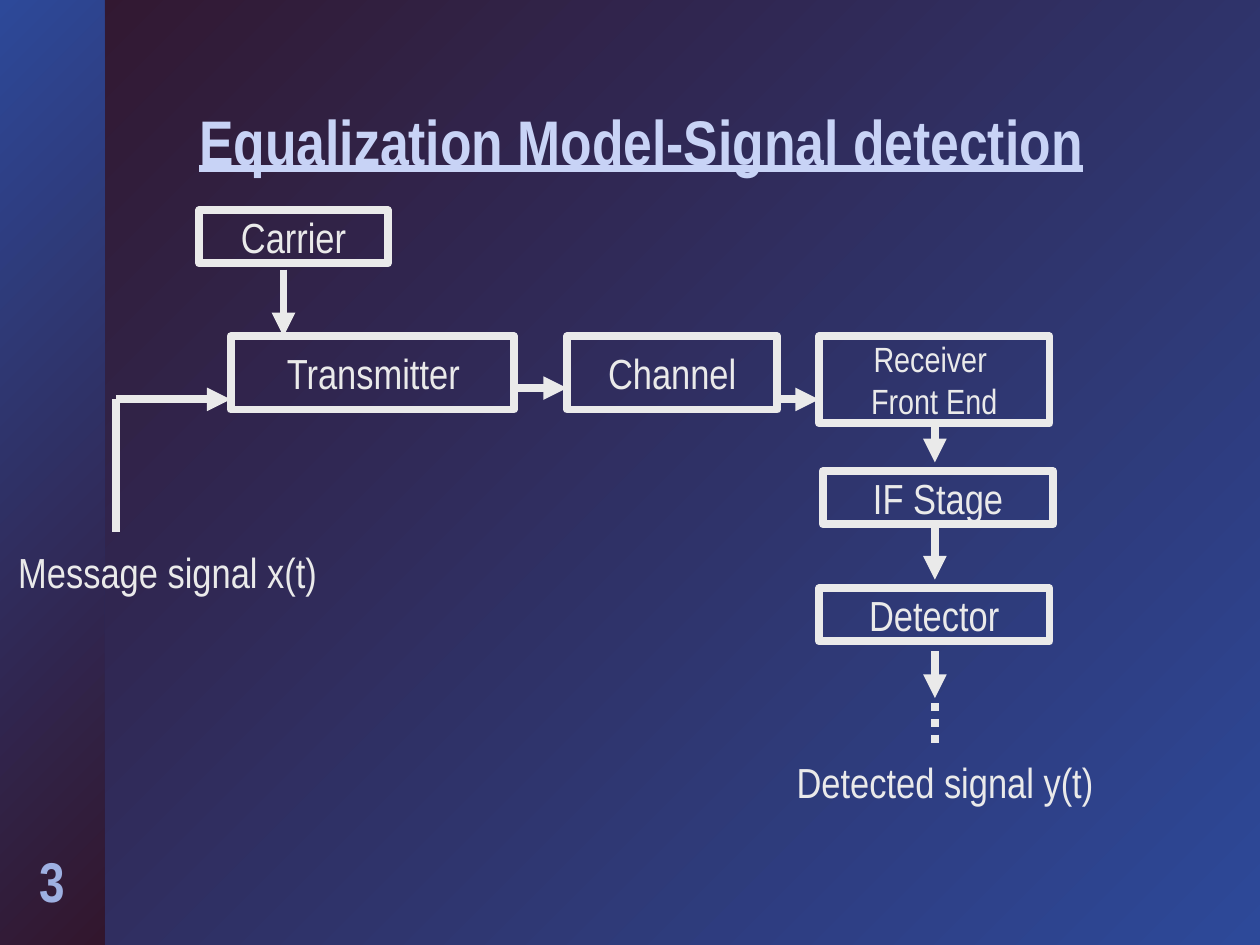
from lxml import etree
from pptx import Presentation
from pptx.dml.color import RGBColor
from pptx.enum import dml, shapes, text
from pptx.oxml.ns import qn
from pptx.util import Inches, Pt

FONT = "Arial Narrow"
INK, DARK, BLUE = "EAEAEA", "32162D", "2D4999"
TITLE = "Equalization Model-Signal detection"

# Blocks: text, left, top, width, height, size
BLOCKS = [
    ("Carrier", 1.58, 1.67, 1.5, 0.42, 24),
    (" Transmitter\t", 1.83, 2.67, 2.25, 0.58, 24),
    ("Channel", 4.5, 2.67, 1.67, 0.58, 24),
    ("Receiver \nFront End", 6.5, 2.67, 1.83, 0.69, 20),
    ("IF Stage", 6.53, 3.74, 1.83, 0.42, 24),
    ("Detector", 6.5, 4.67, 1.83, 0.42, 24),
]
# Signals: text, left, top
SIGNALS = [("Message signal x(t)", 0.58, 4.33),
           ("Detected signal y(t)", 6.75, 5.99)]
# Links: x1, y1, x2, y2
ARROWS = [
    (2.25, 2.14, 2.25, 2.67),
    (0.92, 3.17, 1.83, 3.17),
    (4.08, 3.08, 4.5, 3.08),
    (6.17, 3.17, 6.5, 3.17),
    (7.42, 3.35, 7.42, 3.67),
    (7.42, 4.17, 7.42, 4.6),
    (7.42, 5.17, 7.42, 5.54),
]
FEED = (0.92, 3.17, 0.92, 4.22)
DOTS = (7.42, 5.58, 7.42, 5.9)


def color(code):
    return RGBColor.from_string(code)


def blend(fill, first, last):
    fill.gradient()
    fill.gradient_angle = 315
    for stop, code in zip(fill.gradient_stops, (first, last)):
        stop.color.rgb = color(code)


def write(shape, words, size, code=INK, bold=False, wrap=False):
    frame = shape.text_frame
    frame.text = words
    frame.word_wrap = wrap
    frame.auto_size = text.MSO_AUTO_SIZE.NONE
    frame.vertical_anchor = text.MSO_ANCHOR.MIDDLE
    for para in frame.paragraphs:
        para.alignment = text.PP_ALIGN.CENTER
        for run in para.runs:
            font = run.font
            font.name, font.size, font.bold = FONT, Pt(size), bold
            font.color.rgb = color(code)
    return frame


def box(slide, left, top, width, height):
    shape = slide.shapes.add_shape(
        shapes.MSO_SHAPE.RECTANGLE, *map(Inches, (left, top, width, height)))
    shape.shadow.inherit = False
    return shape


def label(slide, words, left, top, width, height, size, **style):
    area = slide.shapes.add_textbox(*map(Inches, (left, top, width, height)))
    return write(area, words, size, **style)


def link(slide, ends, head=True, dash=None):
    wire = slide.shapes.add_connector(
        shapes.MSO_CONNECTOR.STRAIGHT, *map(Inches, ends))
    wire.line.color.rgb = color(INK)
    wire.line.width = Pt(4.5)
    if dash:
        wire.line.dash_style = dash
    if head:
        etree.SubElement(wire.line._get_or_add_ln(), qn("a:tailEnd"),
                         type="triangle")
    etree.SubElement(wire._element.spPr, qn("a:effectLst"))


def shade(run, code):
    effect = etree.Element(qn("a:effectLst"))
    cast = etree.SubElement(effect, qn("a:outerShdw"), dist="35921",
                            dir="2700000", algn="ctr", rotWithShape="0")
    etree.SubElement(cast, qn("a:srgbClr"), val=code)
    run.font._element.find(qn("a:solidFill")).addnext(effect)


def main():
    deck = Presentation()
    deck.slide_width, deck.slide_height = Inches(10), Inches(7.5)
    slide = deck.slides.add_slide(deck.slide_layouts[5])

    # Background, side band and page number
    blend(slide.background.fill, DARK, BLUE)
    band = box(slide, 0, 0, 0.83, 7.5)
    blend(band.fill, BLUE, DARK)
    band.line.fill.background()
    label(slide, "3", 0.08, 6.67, 0.67, 0.63, 32, code="9EB0E2", bold=True)

    # Title
    title = slide.shapes.title
    title.left, title.top = Inches(1.13), Inches(0.83)
    title.width, title.height = Inches(7.92), Inches(0.42)
    frame = write(title, TITLE, 36, "C8D3F6", bold=True, wrap=True)
    frame.vertical_anchor = text.MSO_ANCHOR.TOP
    para = frame.paragraphs[0]
    para.line_spacing = 0.9
    para.runs[0].font.underline = True
    shade(para.runs[0], "003333")

    # Blocks
    for words, left, top, width, height, size in BLOCKS:
        block = box(slide, left, top, width, height)
        block.fill.background()
        block.line.color.rgb = color(INK)
        block.line.width = Pt(4.5)
        write(block, words, size)

    # Links
    for ends in ARROWS:
        link(slide, ends)
    link(slide, FEED, head=False)
    link(slide, DOTS, head=False, dash=dml.MSO_LINE.ROUND_DOT)

    # Signal names
    for words, left, top in SIGNALS:
        label(slide, words, left, top, 1.5, 0.42, 24)

    deck.save("out.pptx")


if __name__ == "__main__":
    main()
